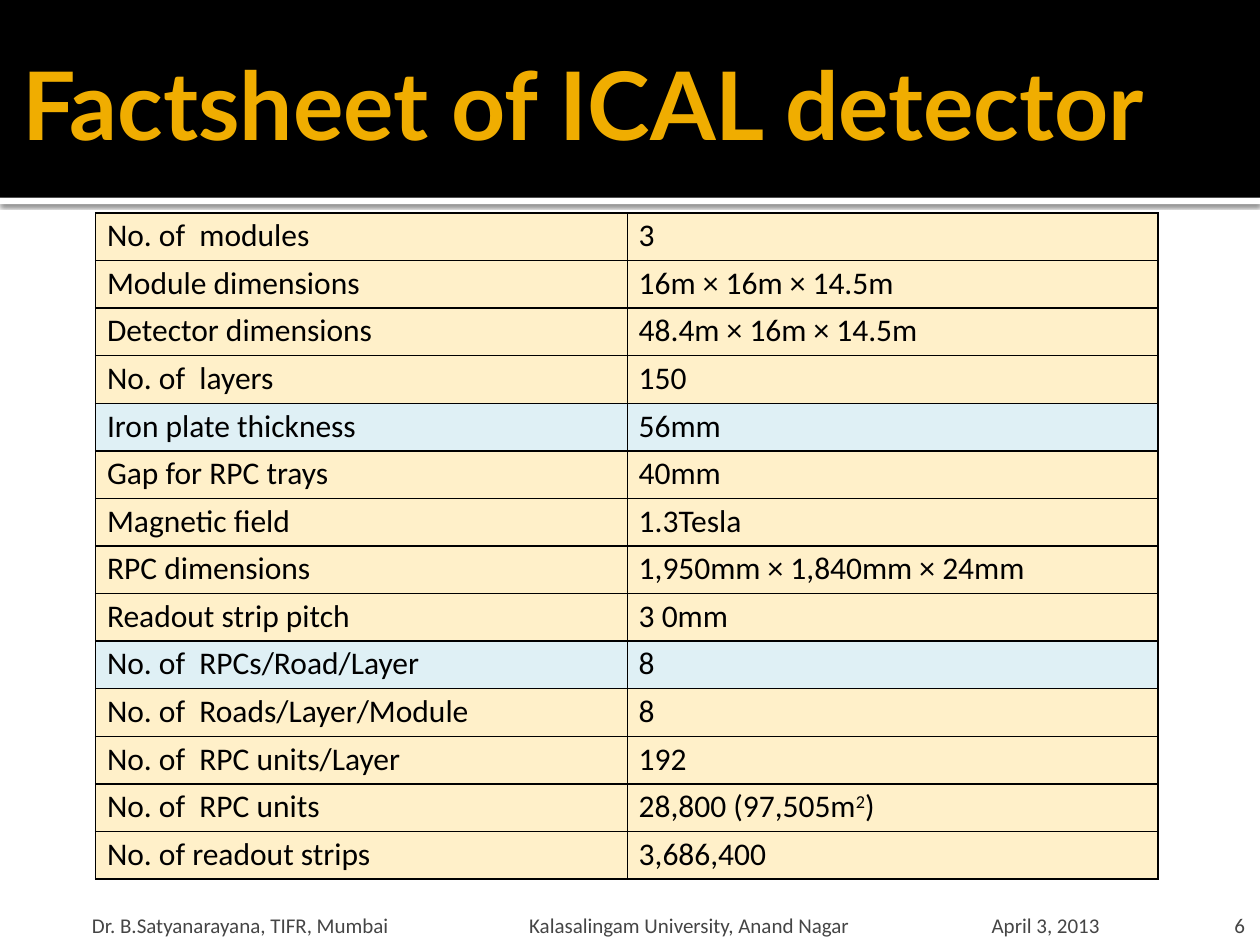
from lxml.etree import SubElement
from pptx import Presentation
from pptx.dml.color import RGBColor
from pptx.enum.shapes import MSO_SHAPE
from pptx.enum.text import MSO_ANCHOR, PP_ALIGN
from pptx.oxml import parse_xml
from pptx.oxml.ns import nsdecls, qn
from pptx.util import Inches, Pt

COLORS = {"black": "000000", "white": "FFFFFF", "gold": "F0AD00",
          "cream": "FFF0C9", "ice": "DFF0F5", "grey": "454545"}

TITLE = "Factsheet of ICAL detector"
FACTS = [
    ("No. of  modules", "3"),
    ("Module dimensions", "16m × 16m × 14.5m"),
    ("Detector dimensions", "48.4m × 16m × 14.5m"),
    ("No. of  layers", "150"),
    ("Iron plate thickness", "56mm"),
    ("Gap for RPC trays", "40mm"),
    ("Magnetic field", "1.3Tesla"),
    ("RPC dimensions", "1,950mm × 1,840mm × 24mm"),
    ("Readout strip pitch", "3 0mm"),
    ("No. of  RPCs/Road/Layer", "8"),
    ("No. of  Roads/Layer/Module", "8"),
    ("No. of  RPC units/Layer", "192"),
    ("No. of  RPC units", "28,800 (97,505m^2^)"),  # ^ marks superscript
    ("No. of readout strips", "3,686,400"),
]
HIGHLIGHTED = {"Iron plate thickness", "No. of  RPCs/Road/Layer"}
FOOTER = ["Dr. B.Satyanarayana, TIFR, Mumbai",
          "Kalasalingam University, Anand Nagar", "April 3, 2013"]
FOOTER_TABS = [3.47, 7.14]
PAGE = "6"


def rgb(name):
    return RGBColor.from_string(COLORS[name])


def set_margins(target, left, top, right, bottom):
    margins = dict(left=left, top=top, right=right, bottom=bottom)
    for side, value in margins.items():
        setattr(target, f"margin_{side}", Inches(value))


def add_run(p, text, size, color, font="Calibri", bold=False):
    r = p.add_run()
    r.text = text
    for name, value in dict(size=Pt(size), name=font, bold=bold).items():
        setattr(r.font, name, value)
    r.font.color.rgb = rgb(color)
    return r


def add_bar(slide, top, height, color):
    sp = slide.shapes.add_shape(MSO_SHAPE.RECTANGLE, 0, Inches(top),
                                Inches(10), Inches(height))
    sp.shadow.inherit = False
    sp.fill.solid()
    sp.fill.fore_color.rgb = rgb(color)
    sp.line.fill.background()
    return sp


def add_shadow(sp):
    effects = sp._element.spPr.find(qn("a:effectLst"))
    effects.append(parse_xml(
        f'<a:outerShdw {nsdecls("a")} blurRad="{Pt(2.5)}" dist="{Pt(0.8)}" '
        f'dir="5400000" rotWithShape="0"><a:srgbClr val="{COLORS["black"]}">'
        '<a:alpha val="60000"/></a:srgbClr></a:outerShdw>'))


def add_footer_box(slide, left, width, margins):
    box = slide.shapes.add_textbox(Inches(left), Inches(7.18),
                                   Inches(width), Inches(0.28))
    tf = box.text_frame
    tf.word_wrap = True
    tf.vertical_anchor = MSO_ANCHOR.MIDDLE
    set_margins(tf, *margins)
    return tf.paragraphs[0]


def add_borders(cell):
    tcPr = cell._tc.get_or_add_tcPr()
    for i, side in enumerate(("lnL", "lnR", "lnT", "lnB")):
        tcPr.insert(i, parse_xml(
            f'<a:{side} {nsdecls("a")} w="{Pt(1)}"><a:solidFill>'
            f'<a:srgbClr val="{COLORS["black"]}"/></a:solidFill></a:{side}>'))


def fill_cell(cell, text, color):
    cell.fill.solid()
    cell.fill.fore_color.rgb = rgb(color)
    add_borders(cell)
    set_margins(cell, 0.09, 0.03, 0.09, 0.03)
    for i, part in enumerate(text.split("^")):
        if part:
            r = add_run(cell.text_frame.paragraphs[0], part, 18, "black")
            if i % 2:
                r.font._element.set("baseline", "30000")


def add_title(slide):
    title = slide.shapes.title
    slide.shapes._spTree.append(title._element)  # in front of the bars
    place = dict(left=0.08, top=0.13, width=9.84, height=1.37)
    for name, value in place.items():
        setattr(title, name, Inches(value))
    tf = title.text_frame
    tf.word_wrap = True
    tf.vertical_anchor = MSO_ANCHOR.MIDDLE
    set_margins(tf, 0.1, 0.05, 0.05, 0.05)
    p = tf.paragraphs[0]
    p.alignment = PP_ALIGN.LEFT
    add_run(p, TITLE, 54, "gold", "Lato", True)


def add_facts(slide):
    height = Inches(5.29)
    table = slide.shapes.add_table(len(FACTS), 2, Inches(0.76), Inches(1.69),
                                   Inches(8.43), height).table
    table.first_row = table.horz_banding = False
    for column, width in zip(table.columns, (4.22, 4.21)):
        column.width = Inches(width)
    for row, fact in zip(table.rows, FACTS):
        row.height = height // len(FACTS)
        color = "ice" if fact[0] in HIGHLIGHTED else "cream"
        for cell, text in zip(row.cells, fact):
            fill_cell(cell, text, color)


def add_footer(slide):
    p = add_footer_box(slide, 0.01, 9.45, (0.72, 0.05, 0.05, 0))
    tabs = SubElement(p._p.get_or_add_pPr(), qn("a:tabLst"))
    for pos in FOOTER_TABS:
        SubElement(tabs, qn("a:tab"), pos=str(Inches(pos)), algn="l")
    add_run(p, "\t".join(FOOTER), 12, "grey")

    p = add_footer_box(slide, 9.47, 0.51, (0.1, 0.05, 0.1, 0))
    p.alignment = PP_ALIGN.RIGHT
    add_run(p, PAGE, 12, "grey")


def main():
    prs = Presentation()
    prs.slide_width, prs.slide_height = Inches(10), Inches(7.5)
    slide = prs.slides.add_slide(prs.slide_layouts[5])
    add_shadow(add_bar(slide, 1.57, 0.05, "white"))
    add_bar(slide, 0, 1.57, "black")
    add_title(slide)
    add_facts(slide)
    add_footer(slide)
    prs.save("out.pptx")


if __name__ == "__main__":
    main()
